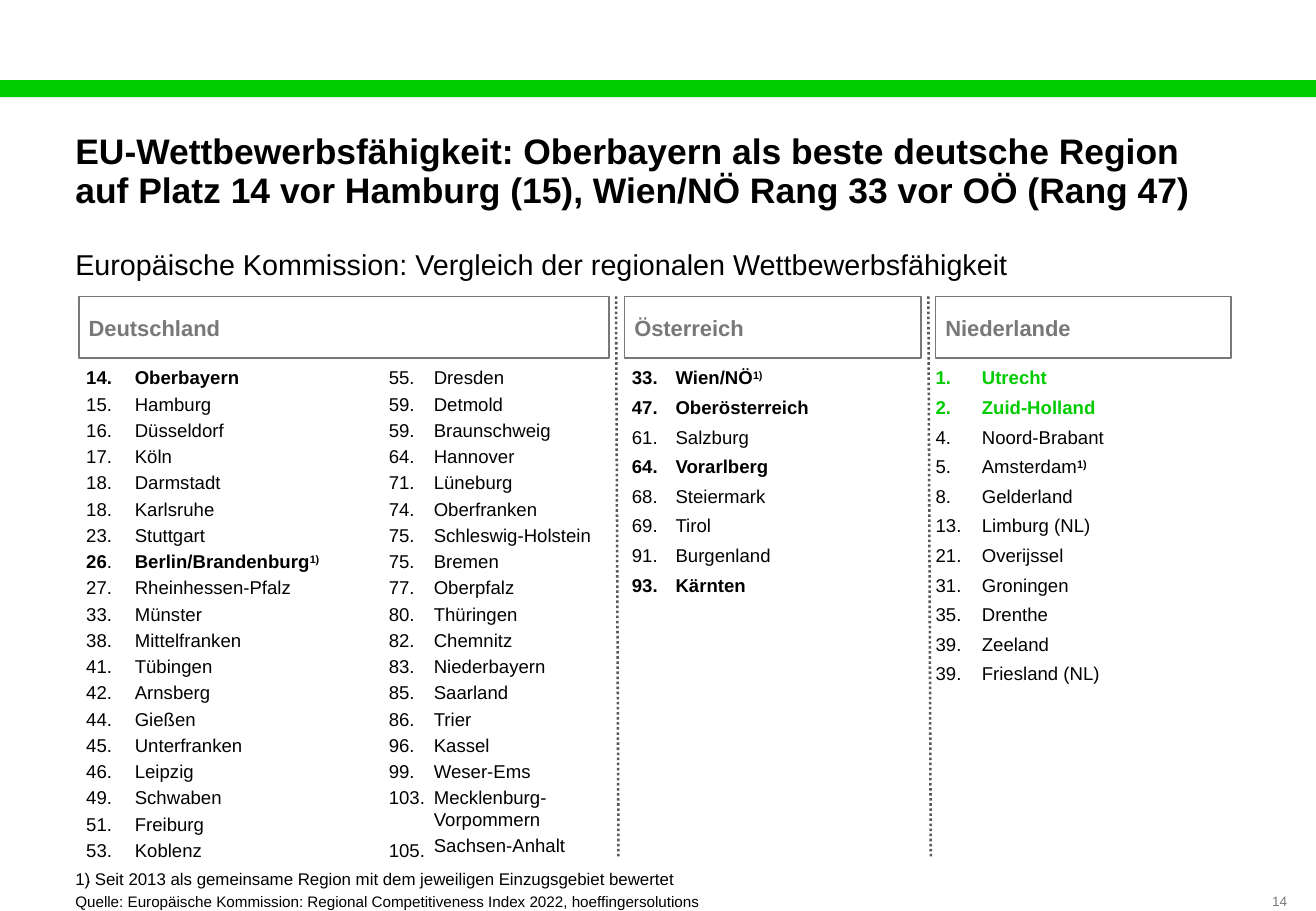
import pptx
import pptx.dml.color
import pptx.enum.dml
import pptx.enum.shapes
import pptx.enum.text
import pptx.oxml
import pptx.util
from pptx.util import Inches, Pt

FONT = "Arial"
BLACK, GREEN, GREY, DARK_GREY, WHITE = "000000", "00CC00", "76787A", "595959", "FFFFFF"
ALIGN = pptx.enum.text.PP_ALIGN
ANCHOR = pptx.enum.text.MSO_ANCHOR

LIST_TOP = 3.03
HEADER_TOP = 2.44
HEADERS = [("Deutschland", 0.65, 4.36), ("Österreich", 5.14, 2.44), ("Niederlande", 7.7, 2.43)]
DIVIDERS = [5.07, 7.64]

# In the lists, "*" switches bold on or off and "^" starts a superscript.
GERMANY_1 = [
    ("*14.", "*Oberbayern"), ("15.", "Hamburg"), ("16.", "Düsseldorf"), ("17.", "Köln"),
    ("18.", "Darmstadt"), ("18.", "Karlsruhe"), ("23.", "Stuttgart"),
    ("*26*.", "*Berlin/Brandenburg^1)"), ("27.", "Rheinhessen-Pfalz"), ("33.", "Münster"),
    ("38.", "Mittelfranken"), ("41.", "Tübingen"), ("42.", "Arnsberg"), ("44.", "Gießen"),
    ("45.", "Unterfranken"), ("46.", "Leipzig"), ("49.", "Schwaben"), ("51.", "Freiburg"),
    ("53.", "Koblenz"), (".", None),
]
GERMANY_2 = [
    ("55.", "Dresden"), ("59.", "Detmold"), ("59.", "Braunschweig"), ("64.", "Hannover"),
    ("71.", "Lüneburg"), ("74.", "Oberfranken"), ("75.", "Schleswig-Holstein"),
    ("75.", "Bremen"), ("77.", "Oberpfalz"), ("80.", "Thüringen"), ("82.", "Chemnitz"),
    ("83.", "Niederbayern"), ("85.", "Saarland"), ("86.", "Trier"), ("96.", "Kassel"),
    ("99.", "Weser-Ems"), ("103.", "Mecklenburg- Vorpommern"), ("105.", "Sachsen-Anhalt"),
]
AUSTRIA = [
    ("*33.", "*Wien/NÖ^1)"), ("*47.", "*Oberösterreich"), ("61.", "Salzburg"),
    ("*64.", "*Vorarlberg"), ("68.", "Steiermark"), ("69.", "Tirol"),
    ("91.", "Burgenland"), ("*93.", "*Kärnten"),
]
NETHERLANDS = [
    ("*1.", "*Utrecht"), ("*2.", "*Zuid-Holland"), ("4.", "Noord-Brabant"),
    ("5.", "Amsterdam*^1)"), ("8.", "Gelderland"), ("13.", "Limburg (NL)"),
    ("21.", "Overijssel"), ("31.", "Groningen"), ("35.", "Drenthe"), ("39.", "Zeeland"),
    ("39.", "Friesland (NL)"),
]


def rgb(color):
    return pptx.dml.color.RGBColor.from_string(color)


def style_font(font, size, color=BLACK, bold=False):
    font.name = FONT
    font.size = Pt(size)
    font.bold = bold
    font.color.rgb = rgb(color)


def set_frame(tf, anchor=ANCHOR.TOP, left=0):
    tf.word_wrap = True
    tf.auto_size = pptx.enum.text.MSO_AUTO_SIZE.NONE
    tf.vertical_anchor = anchor
    tf.margin_left = Inches(left)
    tf.margin_top = tf.margin_right = tf.margin_bottom = 0


def add_box(s, x, y, w, h, anchor=ANCHOR.TOP):
    tf = s.shapes.add_textbox(Inches(x), Inches(y), Inches(w), Inches(h)).text_frame
    set_frame(tf, anchor)
    return tf


def add_text(s, text, x, y, w, h, size, color=BLACK, anchor=ANCHOR.TOP, align=ALIGN.LEFT):
    tf = add_box(s, x, y, w, h, anchor)
    tf.text = text
    p = tf.paragraphs[0]
    p.alignment = align
    style_font(p.runs[0].font, size, color)


def add_rect(s, x, y, w, h, fill):
    sp = s.shapes.add_shape(pptx.enum.shapes.MSO_SHAPE.RECTANGLE,
                            Inches(x), Inches(y), Inches(w), Inches(h))
    sp.shadow.inherit = False
    sp.fill.solid()
    sp.fill.fore_color.rgb = rgb(fill)
    sp.line.fill.background()
    return sp


def add_header(s, text, x, w):
    sp = add_rect(s, x, HEADER_TOP, w, 0.51, WHITE)
    sp.line.color.rgb = rgb(GREY)
    sp.line.width = Pt(1)
    tf = sp.text_frame
    set_frame(tf, ANCHOR.MIDDLE, 0.08)
    tf.text = text
    p = tf.paragraphs[0]
    p.alignment = ALIGN.LEFT
    style_font(p.runs[0].font, 13, GREY, True)


def add_divider(s, x):
    line = s.shapes.add_connector(pptx.enum.shapes.MSO_CONNECTOR.STRAIGHT, Inches(x),
                                  Inches(HEADER_TOP), Inches(x + 0.02), Inches(7.06))
    line.line.color.rgb = rgb(DARK_GREY)
    line.line.width = Pt(1.5)
    line.line.dash_style = pptx.enum.dml.MSO_LINE.ROUND_DOT
    line._element.spPr.append(pptx.oxml.parse_xml(
        '<a:effectLst xmlns:a="http://schemas.openxmlformats.org/drawingml/2006/main"/>'))


def add_marked_runs(p, text, color):
    """Write text whose "*" toggles bold and whose "^" starts a superscript."""
    for i, part in enumerate(text.split("*")):
        for j, piece in enumerate(part.split("^")):
            if piece:
                r = p.add_run()
                r.text = piece
                style_font(r.font, 11, color, i % 2 == 1)
                if j:
                    r._r.get_or_add_rPr().set("baseline", "30000")


def add_column(s, lines, x, w, gap, green):
    """Add one list; its first `green` lines are coloured."""
    tf = add_box(s, x, LIST_TOP, w, 4.1)
    for i, text in enumerate(lines):
        p = tf.add_paragraph() if i else tf.paragraphs[0]
        p.line_spacing = 0.95
        p.space_before = Pt(gap if i else 0)
        add_marked_runs(p, text, GREEN if i < green else BLACK)
    return tf


def add_ranking(s, regions, rank_x, name_x, name_w, gap, green=0):
    """Add ranks and names side by side and return the frame of the ranks."""
    ranks = add_column(s, [rank for rank, _ in regions], rank_x, 0.5, gap, green)
    add_column(s, [name for _, name in regions if name], name_x, name_w, gap, green)
    return ranks


def add_title(s, text):
    title = s.shapes.title
    title.left, title.top = Inches(0.62), Inches(1.09)
    title.width, title.height = Inches(9.57), Inches(0.72)
    tf = title.text_frame
    set_frame(tf)
    tf.text = text
    p = tf.paragraphs[0]
    p.alignment = ALIGN.LEFT
    p.line_spacing = 0.93
    style_font(p.runs[0].font, 21, bold=True)


def main():
    prs = pptx.Presentation()
    prs.slide_width, prs.slide_height = Inches(10.83), Inches(7.5)
    s = prs.slides.add_slide(prs.slide_layouts[5])

    add_rect(s, 0, 0.66, 10.83, 0.14, GREEN)
    add_title(s, "EU-Wettbewerbsfähigkeit: Oberbayern als beste deutsche Region "
                 "auf Platz 14 vor Hamburg (15), Wien/NÖ Rang 33 vor OÖ (Rang 47)")
    add_text(s, "Europäische Kommission: Vergleich der regionalen Wettbewerbsfähigkeit",
             0.62, 2.03, 9.57, 0.28, 17)

    for name, x, w in HEADERS:
        add_header(s, name, x, w)
    add_ranking(s, GERMANY_1, 0.71, 1.11, 1.97, 3)
    ranks = add_ranking(s, GERMANY_2, 3.2, 3.57, 1.49, 3)
    ranks.paragraphs[-1].space_before = Pt(18.6)  # the name before it takes two lines
    add_ranking(s, AUSTRIA, 5.2, 5.56, 1.2, 5)
    add_ranking(s, NETHERLANDS, 7.7, 8.08, 2.05, 5, green=2)
    for x in DIVIDERS:
        add_divider(s, x)

    add_text(s, "1) Seit 2013 als gemeinsame Region mit dem jeweiligen Einzugsgebiet bewertet",
             0.62, 7.15, 9.57, 0.17, 10, anchor=ANCHOR.BOTTOM)
    add_text(s, "Quelle: Europäische Kommission: Regional Competitiveness Index 2022, "
                "hoeffingersolutions", 0.62, 7.35, 6.43, 0.15, 9, anchor=ANCHOR.BOTTOM)
    add_text(s, "14", 10.22, 7.35, 0.62, 0.13, 8, GREY, ANCHOR.MIDDLE, ALIGN.CENTER)
    prs.save("out.pptx")


if __name__ == "__main__":
    main()
